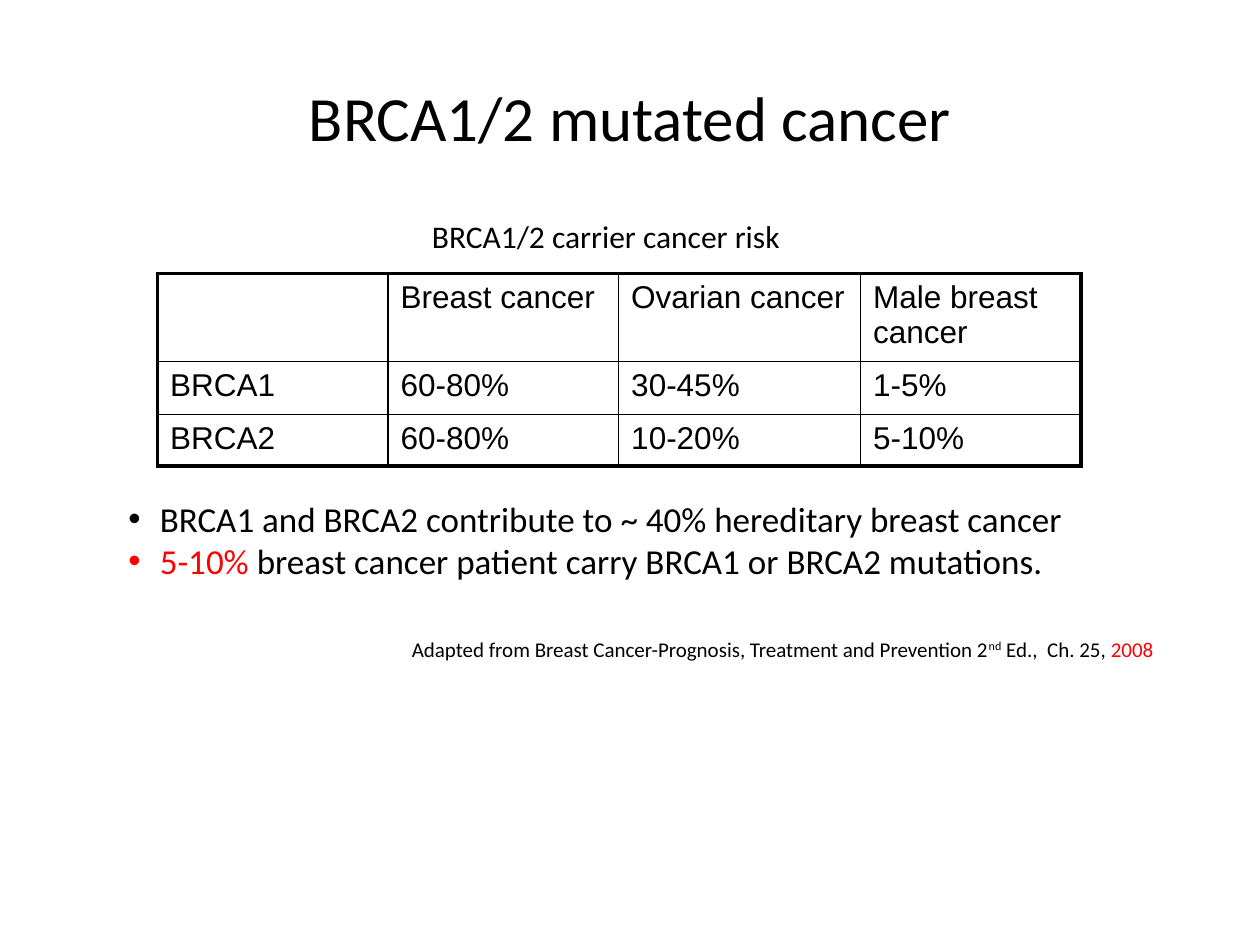
"""Build a slide on cancer risk in BRCA1/2 carriers."""
from lxml import etree
from pptx import Presentation
from pptx import util as u
from pptx.dml.color import RGBColor
from pptx.enum import text
from pptx.oxml import ns

BLACK, RED = "000000", "FF0000"


def color(value):
    return RGBColor.from_string(value)


def write(paragraph, words, size=18, font="Calibri", ink=BLACK, raised=False):
    run = paragraph.add_run()
    run.text = words
    run.font.size = u.Pt(size)
    run.font.name = font
    run.font.color.rgb = color(ink)
    if raised:
        run._r.get_or_add_rPr().set("baseline", "30000")


deck = Presentation()
deck.slide_width, deck.slide_height = u.Inches(10), u.Inches(7.5)
slide = deck.slides.add_slide(deck.slide_layouts[6])

frames = []
for left, top, width, height, wraps in (
    (0.5, 0.3, 9, 1.25, True),
    (3.33, 1.67, 3.3, 0.4, False),
    (0.92, 3.9, 8.67, 0.77, True),
    (3.17, 5, 6.17, 0.3, False),
):
    box = slide.shapes.add_textbox(*map(u.Inches, (left, top, width, height)))
    box.text_frame.word_wrap = wraps
    frames.append(box.text_frame)
title, caption, findings, citation = frames

title.vertical_anchor = text.MSO_ANCHOR.MIDDLE
title.paragraphs[0].alignment = text.PP_ALIGN.CENTER
write(title.paragraphs[0], "BRCA1/2 mutated cancer", size=36)
write(caption.paragraphs[0], "BRCA1/2 carrier cancer risk")

points = (
    (("BRCA1 and BRCA2 contribute to ~ 40% hereditary breast cancer", BLACK),),
    (("5-10%", RED), (" breast cancer patient carry BRCA1 or BRCA2 mutations.", BLACK)),
)
for index, point in enumerate(points):
    paragraph = findings.add_paragraph() if index else findings.paragraphs[0]
    layout = paragraph._p.get_or_add_pPr()
    layout.set("marL", str(u.Inches(0.25)))
    layout.set("indent", str(-u.Inches(0.25)))
    etree.SubElement(layout, ns.qn("a:buFont"), typeface="Arial")
    etree.SubElement(layout, ns.qn("a:buChar"), char="•")
    for words, ink in point:
        write(paragraph, words, size=20, ink=ink)

source = citation.paragraphs[0]
write(source, "Adapted from Breast Cancer-Prognosis, Treatment and Prevention 2", size=12)
write(source, "nd", size=12, raised=True)
write(source, " Ed.,  Ch. 25, ", size=12)
write(source, "2008", size=12, ink=RED)

risks = (
    ("", "Breast cancer", "Ovarian cancer", "Male breast cancer"),
    ("BRCA1", "60-80%", "30-45%", "1-5%"),
    ("BRCA2", "60-80%", "10-20%", "5-10%"),
)
widths, heights = (1.83, 1.83, 1.92, 1.75), (0.7, 0.42, 0.41)
table = slide.shapes.add_table(
    len(heights), len(widths), u.Inches(1.25), u.Inches(2.17),
    u.Inches(sum(widths)), u.Inches(sum(heights)),
).table
table.first_row = table.horz_banding = False
for column, width in zip(table.columns, widths):
    column.width = u.Inches(width)
for r, (row, height) in enumerate(zip(risks, heights)):
    table.rows[r].height = u.Inches(height)
    for c, words in enumerate(row):
        cell = table.cell(r, c)
        outer = {"L": c == 0, "R": c == len(widths) - 1,
                 "T": r == 0, "B": r == len(heights) - 1}
        properties = cell._tc.get_or_add_tcPr()
        for side, is_outer in outer.items():
            edge = etree.SubElement(properties, ns.qn(f"a:ln{side}"),
                                    w=str(u.Pt(2.25 if is_outer else 1)))
            paint = etree.SubElement(edge, ns.qn("a:solidFill"))
            etree.SubElement(paint, ns.qn("a:srgbClr"), val=BLACK)
        cell.fill.background()
        if words:
            paragraph = cell.text_frame.paragraphs[0]
            paragraph.space_before = u.Pt(3.6)
            write(paragraph, words, font="Arial")

deck.save("out.pptx")
